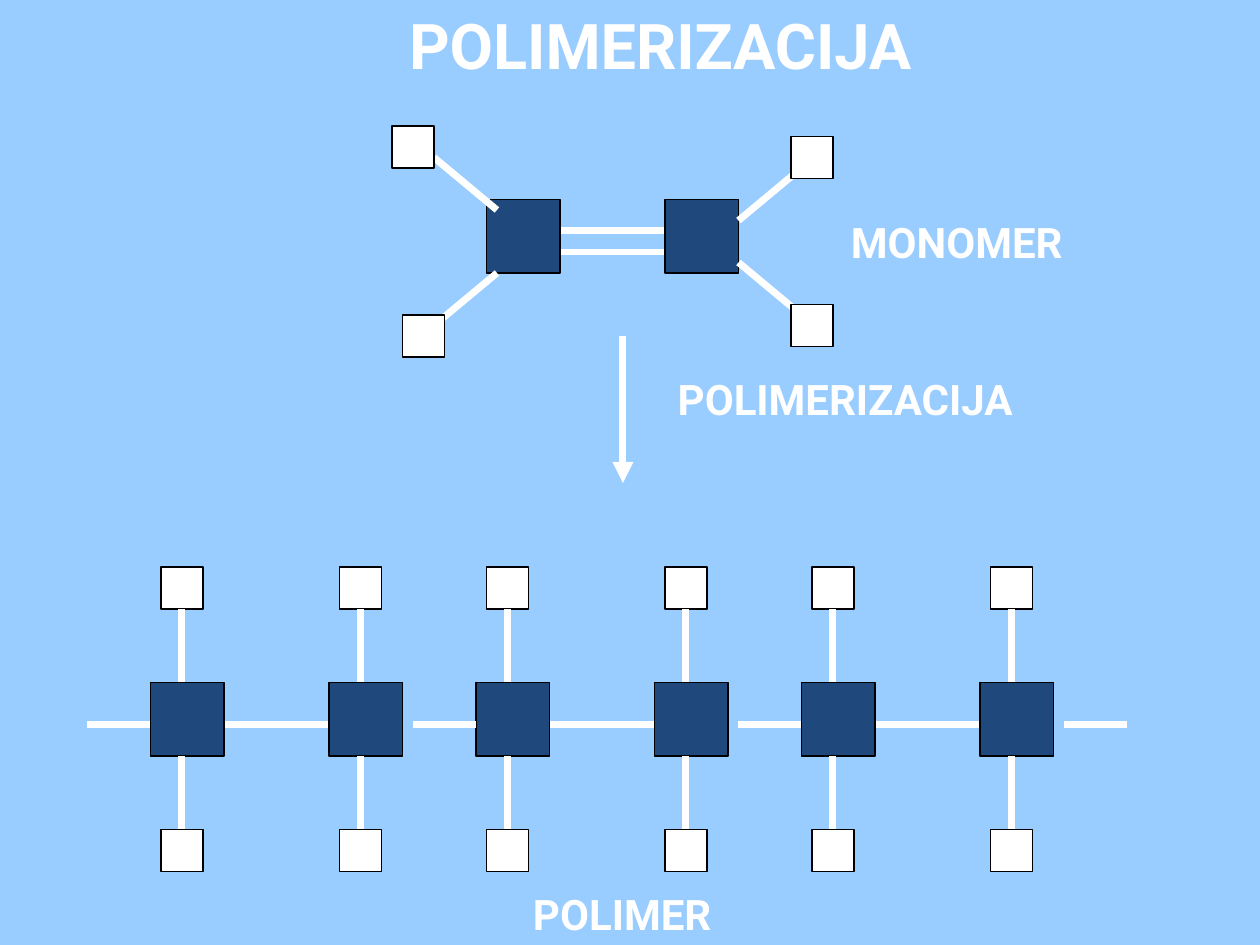
"""Builds a slide that shows a monomer joining into a polymer chain."""
from lxml import etree
from pptx import Presentation, util as u
from pptx.dml.color import RGBColor
from pptx.enum import shapes, text
from pptx.oxml.ns import qn

COLORS = {"sky": "99CCFF", "carbon": "1F497D", "white": "FFFFFF", "outline": "000000"}
FONT = "Roboto"
COLS, ROWS = 120, 90
CARBON, HYDROGEN = 7, 4
LEFT = 8 + 1 / 3
UNITS, UNIT_STEP = 3, 31


def grid(n):
    """Turn grid steps, twelve to the inch, into a length."""
    return u.Inches(n / 12)


def rgb(name):
    """Look up a named colour."""
    return RGBColor.from_string(COLORS[name])


def atom(s, x, y, size, color):
    """Draw a square atom."""
    sp = s.shapes.add_shape(shapes.MSO_SHAPE.RECTANGLE, *map(grid, (x, y, size, size)))
    sp.shadow.inherit = False
    sp.fill.solid()
    sp.fill.fore_color.rgb = rgb(color)
    sp.line.color.rgb = rgb("outline")
    sp.line.width = u.Pt(0.75)
    return sp


def bond(s, x1, y1, x2, y2, arrow=False):
    """Draw a white line, with an arrowhead at its end if asked."""
    cx = s.shapes.add_connector(shapes.MSO_CONNECTOR.STRAIGHT, *map(grid, (x1, y1, x2, y2)))
    cx.line.color.rgb = rgb("white")
    cx.line.width = u.Pt(4)
    if arrow:
        etree.SubElement(cx.line._get_or_add_ln(), qn("a:tailEnd"), type="triangle")
    etree.SubElement(cx._element.spPr, qn("a:effectLst"))
    return cx


def label(s, box, words, size=24):
    """Write a bold centred label in the box."""
    tf = s.shapes.add_textbox(*map(grid, box)).text_frame
    tf.word_wrap = False
    p = tf.paragraphs[0]
    p.text = words
    p.alignment = text.PP_ALIGN.CENTER
    p.font.name, p.font.size, p.font.bold = FONT, u.Pt(size), True
    p.font.color.rgb = rgb("white")


def monomer(s, x, y):
    """Draw two double-bonded carbons with four hydrogens."""
    for row in (12, 10):
        bond(s, x + 16, y + row, x + 27, y + row)
    for col in (9, 26):
        atom(s, x + col, y + 7, CARBON, "carbon")
    for x1, y1, x2, y2 in ((10, 8, 4, 3), (39, 18, 33, 13), (10, 14, 4, 19), (39, 4, 33, 9)):
        bond(s, x + x1, y + y1, x + x2, y + y2)
    for col, row in ((1, 18), (0, 0), (38, 1), (38, 17)):
        atom(s, x + col, y + row, HYDROGEN, "white")


def chain_unit(s, x, y):
    """Draw one repeating unit of the chain with its leading bond."""
    bond(s, x + 13, y + 15, x + 24, y + 15)
    for col in (6, 23):
        atom(s, x + col, y + 11, CARBON, "carbon")
        mid = x + col + 3
        for row, start, end, site in ((0, 11, 4, 2), (25, 18, 25, 0)):
            h = atom(s, x + col + 1, y + row, HYDROGEN, "white")
            bond(s, mid, y + start, mid, y + end).end_connect(h, site)
    bond(s, x, y + 15, x + 6, y + 15)


def polymer(s, x, y):
    """Draw the chain of repeating units and its trailing bond."""
    for i in range(UNITS):
        chain_unit(s, x + i * UNIT_STEP, y)
    end = x + UNITS * UNIT_STEP
    bond(s, end, y + 15, end + 6, y + 15)


def main():
    """Build and save the slide."""
    prs = Presentation()
    prs.slide_width, prs.slide_height = grid(COLS), grid(ROWS)
    s = prs.slides.add_slide(prs.slide_layouts[6])
    s.background.fill.solid()
    s.background.fill.fore_color.rgb = rgb("sky")
    polymer(s, LEFT, 54)
    monomer(s, LEFT + 29, 12)
    bond(s, LEFT + 51, 32, LEFT + 51, 46, arrow=True)
    label(s, (61, 35, 39, 6), "POLIMERIZACIJA")
    label(s, (78, 20, 26.25, 6), "MONOMER")
    label(s, (48, 84, 22.5, 6), "POLIMER")
    label(s, (34.2, 0, 57.4, 8.4), "POLIMERIZACIJA", 36)
    prs.save("out.pptx")


if __name__ == "__main__":
    main()
